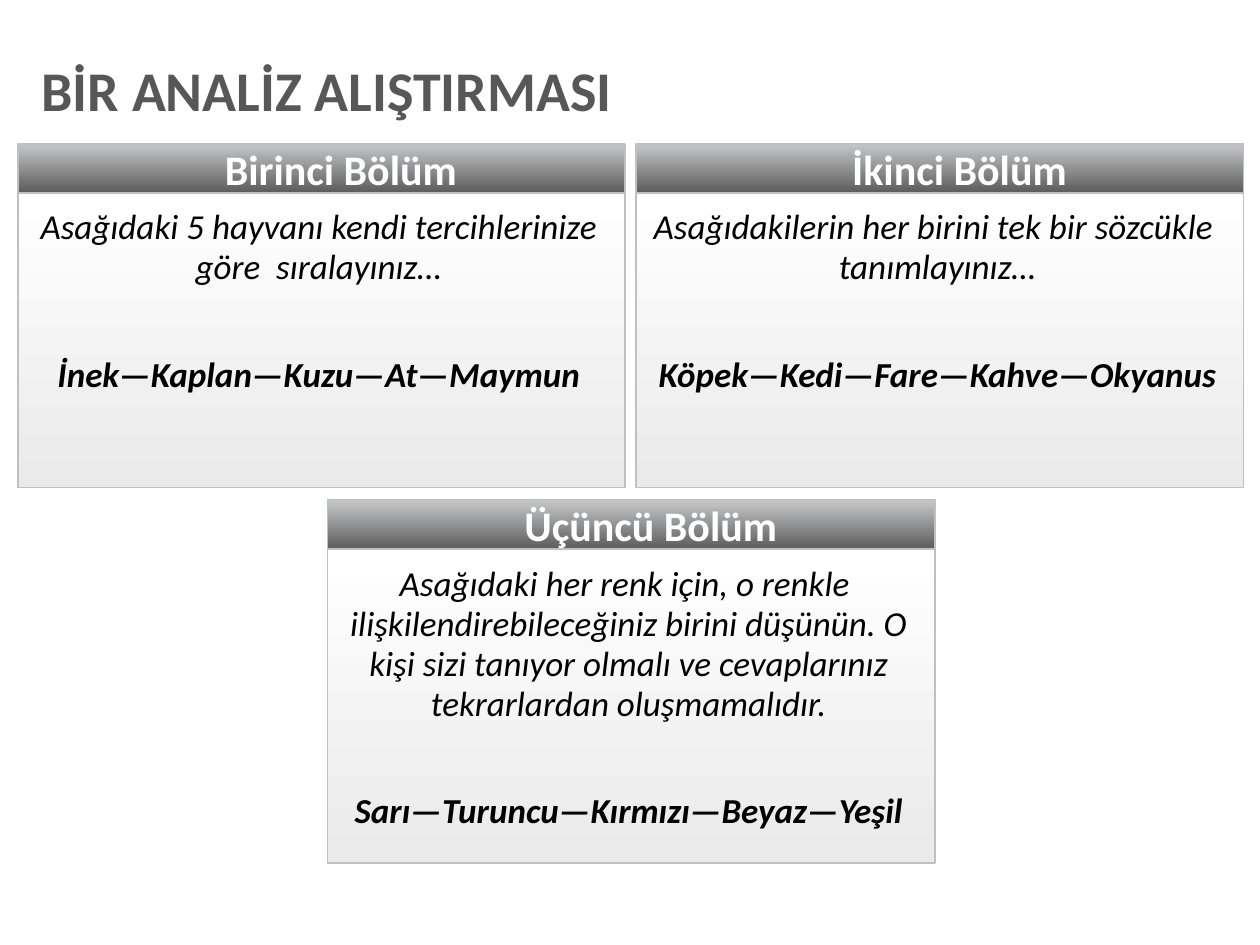
from dataclasses import dataclass

from pptx import Presentation
from pptx import util as u
from pptx.dml.color import RGBColor
from pptx.enum import shapes, text


@dataclass(frozen=True)
class Theme:
    font: str = "Calibri"
    gray: str = "575757"
    black: str = "000000"
    white: str = "FFFFFF"
    border: str = "C0C0C0"
    header_fill: tuple = ("C6C7C8", "5C5C5D")
    body_fill: tuple = ("FFFFFF", "EAEAEA")
    title_size: int = 32
    header_size: int = 24
    body_size: int = 20


theme = Theme()


def add_run(paragraph, words, size, color, bold=False, italic=False):
    run = paragraph.add_run()
    run.text = words
    font = run.font
    font.name, font.size = theme.font, u.Pt(size)
    font.bold, font.italic = bold, italic
    font.color.rgb = RGBColor.from_string(color)


def add_panel(left, top, height, stops, margins, anchor):
    """Add a bordered rectangle with a vertical gradient; return its text frame."""
    shape = slide.shapes.add_shape(
        shapes.MSO_SHAPE.RECTANGLE, u.Inches(left), u.Inches(top),
        u.Inches(panel_width), u.Inches(height))
    shape.shadow.inherit = False
    shape.fill.gradient()
    shape.fill.gradient_angle = 270
    for stop, color in zip(shape.fill.gradient_stops, stops):
        stop.color.rgb = RGBColor.from_string(color)
    shape.line.color.rgb = RGBColor.from_string(theme.border)
    shape.line.width = u.Pt(1)
    frame = shape.text_frame
    frame.word_wrap = True
    frame.vertical_anchor = anchor
    (frame.margin_left, frame.margin_top,
     frame.margin_right, frame.margin_bottom) = map(u.Inches, margins)
    return frame


presentation = Presentation()
presentation.slide_width, presentation.slide_height = u.Inches(10), u.Inches(7.5)
slide = presentation.slides.add_slide(presentation.slide_layouts[5])

# Title
title = slide.shapes.title
title.left, title.top = u.Inches(0.33), u.Inches(0.45)
title.width, title.height = u.Inches(9.32), u.Inches(0.71)
frame = title.text_frame
frame.word_wrap = True
frame.auto_size = text.MSO_AUTO_SIZE.NONE
frame.vertical_anchor = text.MSO_ANCHOR.TOP
frame.margin_left = frame.margin_right = 0
frame.margin_top = frame.margin_bottom = u.Inches(0.05)
paragraph = frame.paragraphs[0]
paragraph.alignment = text.PP_ALIGN.LEFT
paragraph.line_spacing = 0.9
add_run(paragraph, "BİR ANALİZ ALIŞTIRMASI", theme.title_size, theme.gray, bold=True)

# Three sections: left, top, body height, heading, instruction, words
panel_width, header_height = 4.82, 0.39
sections = [
    (0.14, 1.14, 2.34, "Birinci Bölüm",
     "Asağıdaki 5 hayvanı kendi tercihlerinize göre  sıralayınız…",
     "İnek—Kaplan—Kuzu—At—Maymun"),
    (5.05, 1.14, 2.34, "İkinci Bölüm",
     "Asağıdakilerin her birini tek bir sözcükle  tanımlayınız…",
     "Köpek—Kedi—Fare—Kahve—Okyanus"),
    (2.6, 3.97, 2.49, "Üçüncü Bölüm",
     "Asağıdaki her renk için, o renkle  ilişkilendirebileceğiniz birini düşünün. "
     "O kişi sizi tanıyor olmalı ve cevaplarınız tekrarlardan oluşmamalıdır.",
     "Sarı—Turuncu—Kırmızı—Beyaz—Yeşil"),
]
for left, top, body_height, heading, instruction, words in sections:
    header = add_panel(left, top, header_height, theme.header_fill,
                       (0.31, 0, 0, 0), text.MSO_ANCHOR.MIDDLE)
    paragraph = header.paragraphs[0]
    paragraph.alignment = text.PP_ALIGN.CENTER
    add_run(paragraph, heading, theme.header_size, theme.white, bold=True)

    body = add_panel(left, top + header_height, body_height, theme.body_fill,
                     (0.12, 0.12, 0.16, 0.08), text.MSO_ANCHOR.TOP)
    instruction_paragraph, words_paragraph = body.paragraphs[0], body.add_paragraph()
    for paragraph in (instruction_paragraph, words_paragraph):
        paragraph.alignment = text.PP_ALIGN.CENTER
        paragraph.line_spacing = 0.95
    words_paragraph.space_before = u.Pt(38.5)
    add_run(instruction_paragraph, instruction, theme.body_size, theme.black, italic=True)
    add_run(words_paragraph, words, theme.body_size, theme.black, bold=True, italic=True)

presentation.save("out.pptx")
